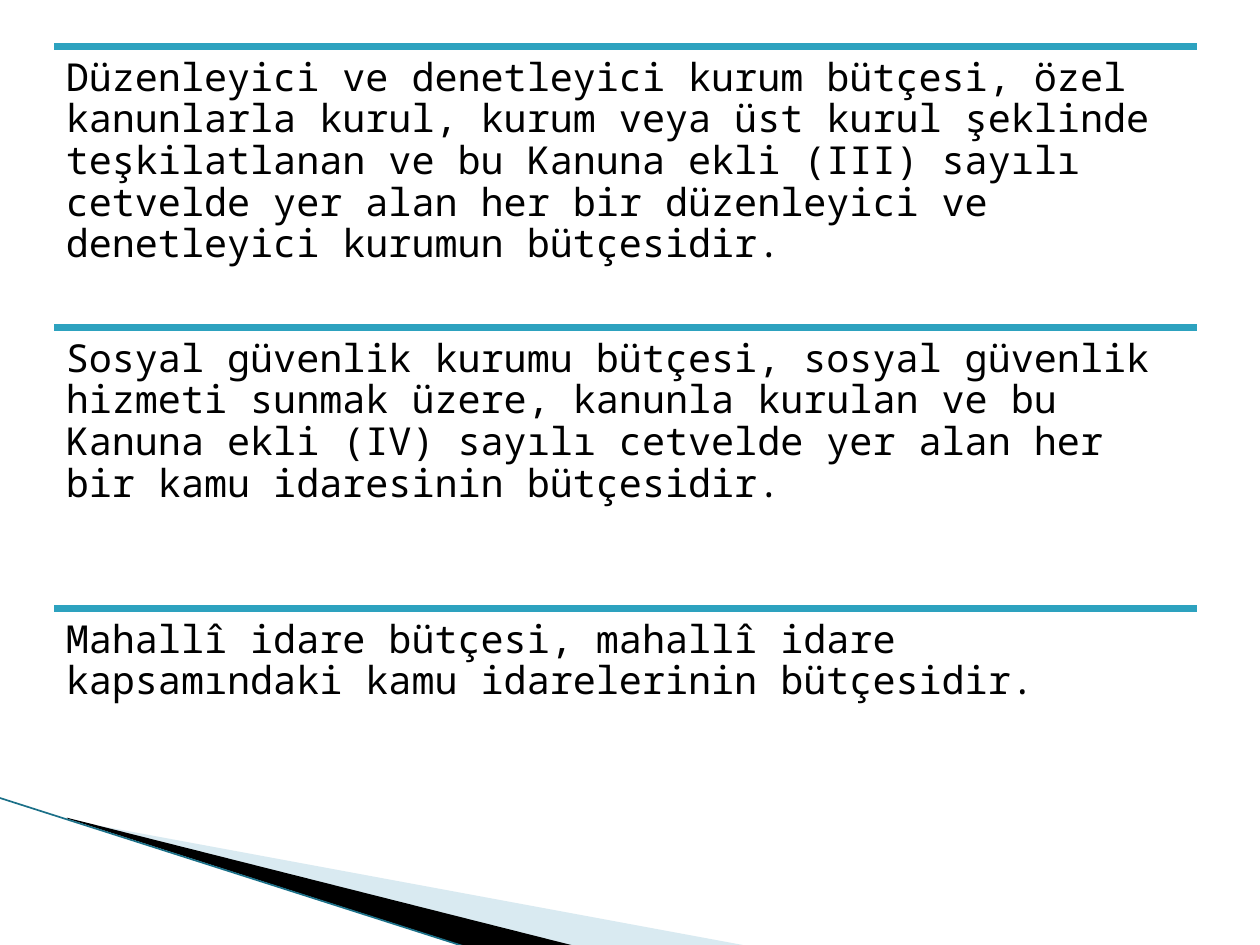
from dataclasses import dataclass

from lxml import etree
from pptx import Presentation
from pptx.dml.color import RGBColor
from pptx.enum import shapes, text
from pptx.oxml.ns import qn
from pptx.util import Pt

HUES = {"rule": "2DA2BF", "pale": "A0CBDC", "edge": "1B7088", "ink": "000000"}
FONT = "Noto Sans Mono"
LEFT, TOP, WIDTH, STEP = 31, 26.64, 653, 160.56


@dataclass
class Wedge:
    points: list[tuple[float, float]]
    hue: str
    alpha: int = 100


WEDGES = [
    Wedge([(39.6, 468.7), (428.4, 540.7), (328.3, 540.7), (39.6, 468)], "pale", 40),
    Wedge([(38.2, 467.3), (329, 540.7), (267.8, 541.4), (38.9, 468)], "ink"),
]

BODIES = [
    "Düzenleyici ve denetleyici kurum bütçesi, özel kanunlarla kurul, kurum veya "
    "üst kurul şeklinde teşkilatlanan ve bu Kanuna ekli (III) sayılı cetvelde yer "
    "alan her bir düzenleyici ve denetleyici kurumun bütçesidir.",
    "Sosyal güvenlik kurumu bütçesi, sosyal güvenlik hizmeti sunmak üzere, kanunla "
    "kurulan ve bu Kanuna ekli (IV) sayılı cetvelde yer alan her bir kamu "
    "idaresinin bütçesidir.",
    "Mahallî idare bütçesi, mahallî idare kapsamındaki kamu idarelerinin bütçesidir.",
]


def paint(name: str) -> RGBColor:
    return RGBColor.from_string(HUES[name])


def draw_wedge(slide, wedge: Wedge) -> None:
    first, *rest = [(Pt(x), Pt(y)) for x, y in wedge.points]
    pen = slide.shapes.build_freeform(*first)
    pen.add_line_segments(rest, close=True)
    shape = pen.convert_to_shape()
    shape.shadow.inherit = False
    shape.line.fill.background()
    shape.fill.solid()
    shape.fill.fore_color.rgb = paint(wedge.hue)
    if wedge.alpha < 100:
        tint = shape.fill._xPr.find(".//" + qn("a:srgbClr"))
        etree.SubElement(tint, qn("a:alpha"), val=str(wedge.alpha * 1000))


def draw_line(slide, x1: float, y1: float, x2: float, y2: float,
              hue: str, width: float) -> None:
    line = slide.shapes.add_connector(
        shapes.MSO_CONNECTOR.STRAIGHT, Pt(x1), Pt(y1), Pt(x2), Pt(y2))
    line.line.color.rgb = paint(hue)
    line.line.width = Pt(width)
    etree.SubElement(line._element.spPr, qn("a:effectLst"))


def add_text(slide, words: str, *, left: float, top: float, width: float,
             height: float, size: float = 22, hue: str = "ink",
             inset: float = 6.6, spacing: float = 0.9) -> None:
    box = slide.shapes.add_textbox(Pt(left), Pt(top), Pt(width), Pt(height))
    frame = box.text_frame
    frame.word_wrap = True
    frame.vertical_anchor = text.MSO_ANCHOR.TOP
    frame.margin_left = frame.margin_right = Pt(inset)
    frame.margin_top = frame.margin_bottom = Pt(inset)
    para = frame.paragraphs[0]
    para.line_spacing = spacing
    run = para.add_run()
    run.text = words
    run.font.name = FONT
    run.font.size = Pt(size)
    run.font.color.rgb = paint(hue)


def main() -> None:
    deck = Presentation()
    deck.slide_width, deck.slide_height = Pt(720), Pt(540)
    slide = deck.slides.add_slide(deck.slide_layouts[6])
    for wedge in WEDGES:
        draw_wedge(slide, wedge)
    draw_line(slide, -0.7, 455.8, 267.1, 541.4, "edge", 0.95)
    for row, body in enumerate(BODIES):
        top = TOP + row * STEP
        draw_line(slide, LEFT, top, LEFT + WIDTH, top, "rule", 4.33)
        add_text(slide, body, left=LEFT, top=top, width=WIDTH, height=STEP)
    deck.save("out.pptx")


if __name__ == "__main__":
    main()
